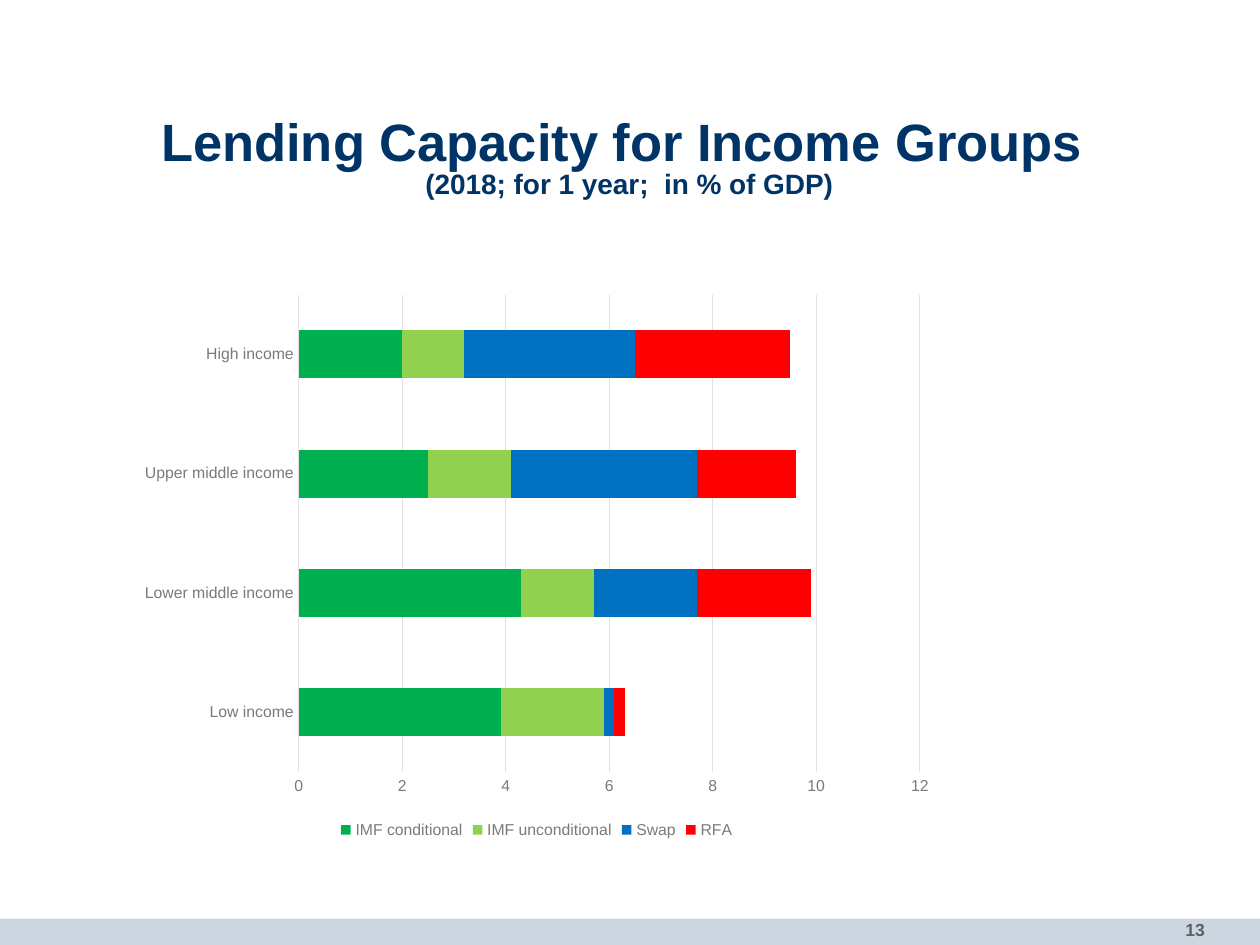
import pptx
import pptx.chart.data
import pptx.dml.color
import pptx.enum.chart
import pptx.enum.shapes
import pptx.enum.text
import pptx.util

Inches = pptx.util.Inches
Pt = pptx.util.Pt
RGBColor = pptx.dml.color.RGBColor
Alignment = pptx.enum.text.PP_ALIGN
Anchor = pptx.enum.text.MSO_ANCHOR

FONT = "Arial"
NAVY = RGBColor(0x00, 0x33, 0x66)
FOOTER_BLUE = RGBColor(0xCC, 0xD6, 0xE0)
NUMBER_GRAY = RGBColor(0x5F, 0x5F, 0x5F)
CHART_TEXT = RGBColor(0x33, 0x33, 0x33)
LABEL_GRAY = RGBColor(0x7A, 0x7A, 0x7A)
GRID_GRAY = RGBColor(0xE0, 0xE0, 0xE0)
GREEN = RGBColor(0x00, 0xB0, 0x50)
LIGHT_GREEN = RGBColor(0x92, 0xD0, 0x50)
BLUE = RGBColor(0x00, 0x70, 0xC0)
RED = RGBColor(0xFF, 0x00, 0x00)

INCOME_GROUPS = ["Low income", "Lower middle income", "Upper middle income", "High income"]
LENDING_SOURCES = [
    ("IMF conditional", [3.9, 4.3, 2.5, 2], GREEN),
    ("IMF unconditional", [2, 1.4, 1.6, 1.2], LIGHT_GREEN),
    ("Swap", [0.2, 2, 3.6, 3.3], BLUE),
    ("RFA", [0.2, 2.2, 1.9, 3], RED),
]


def set_font(font, size, color, bold=False):
    """Apply the common typeface with a size, colour and weight."""
    font.name = FONT
    font.size = Pt(size)
    font.bold = bold
    font.color.rgb = color


def add_text_box(slide, left, top, width, height, alignment):
    """Add a wrapping, middle-anchored text box and return its frame."""
    box = slide.shapes.add_textbox(Inches(left), Inches(top), Inches(width), Inches(height))
    frame = box.text_frame
    frame.word_wrap = True
    frame.vertical_anchor = Anchor.MIDDLE
    frame.paragraphs[0].alignment = alignment
    return frame


def add_footer(slide, number):
    """Add the footer band and the slide number."""
    band = slide.shapes.add_shape(
        pptx.enum.shapes.MSO_SHAPE.RECTANGLE, 0, Inches(7.29), Inches(10), Inches(0.21))
    band.shadow.inherit = False
    band.fill.solid()
    band.fill.fore_color.rgb = FOOTER_BLUE
    band.line.fill.background()
    paragraph = add_text_box(slide, 8.32, 7.25, 1.34, 0.26, Alignment.RIGHT).paragraphs[0]
    paragraph.text = number
    set_font(paragraph.font, 10, NUMBER_GRAY, bold=True)


def add_title(slide, title, subtitle):
    """Add the title with its smaller second line."""
    frame = add_text_box(slide, 0.27, 1.03, 9.45, 0.47, Alignment.CENTER)
    frame.margin_left = frame.margin_right = frame.margin_top = frame.margin_bottom = 0
    paragraph = frame.paragraphs[0]
    paragraph.line_spacing = 0.85
    title_run = paragraph.add_run()
    title_run.text = title
    set_font(title_run.font, 30, NAVY, bold=True)
    paragraph.add_line_break()
    subtitle_run = paragraph.add_run()
    subtitle_run.text = subtitle
    set_font(subtitle_run.font, 16, NAVY, bold=True)


def style_axis(axis):
    """Hide the tick marks and set the label font."""
    axis.major_tick_mark = axis.minor_tick_mark = pptx.enum.chart.XL_TICK_MARK.NONE
    set_font(axis.tick_labels.font, 9, LABEL_GRAY)


def style_line(line):
    """Draw a thin gray chart line."""
    line.color.rgb = GRID_GRAY
    line.width = Pt(0.75)


def add_lending_chart(slide):
    """Add the stacked bars of lending capacity by income group."""
    data = pptx.chart.data.CategoryChartData(number_format="General")
    data.categories = INCOME_GROUPS
    for name, values, _ in LENDING_SOURCES:
        data.add_series(name, values)
    chart = slide.shapes.add_chart(
        pptx.enum.chart.XL_CHART_TYPE.BAR_STACKED,
        Inches(1.02), Inches(2.25), Inches(6.48), Inches(4.45), data).chart
    chart.has_title = False
    set_font(chart.font, 10, CHART_TEXT)

    plot = chart.plots[0]
    plot.gap_width = 150
    plot.overlap = 100
    plot.vary_by_categories = False
    for series, (_, _, color) in zip(plot.series, LENDING_SOURCES):
        series.format.fill.solid()
        series.format.fill.fore_color.rgb = color

    style_axis(chart.category_axis)
    style_line(chart.category_axis.format.line)
    value_axis = chart.value_axis
    style_axis(value_axis)
    value_axis.format.line.fill.background()
    value_axis.minimum_scale = 0
    value_axis.maximum_scale = 12
    value_axis.major_unit = 2
    value_axis.has_major_gridlines = True
    style_line(value_axis.major_gridlines.format.line)

    chart.has_legend = True
    chart.legend.position = pptx.enum.chart.XL_LEGEND_POSITION.BOTTOM
    chart.legend.include_in_layout = False
    set_font(chart.legend.font, 9, LABEL_GRAY)


def main():
    """Build and save the slide."""
    presentation = pptx.Presentation()
    presentation.slide_width = Inches(10)
    presentation.slide_height = Inches(7.5)
    slide = presentation.slides.add_slide(presentation.slide_layouts[6])
    add_footer(slide, "13")
    add_title(slide, "Lending Capacity for Income Groups ", "(2018; for 1 year;  in % of GDP)")
    add_lending_chart(slide)
    presentation.save("out.pptx")


if __name__ == "__main__":
    main()
